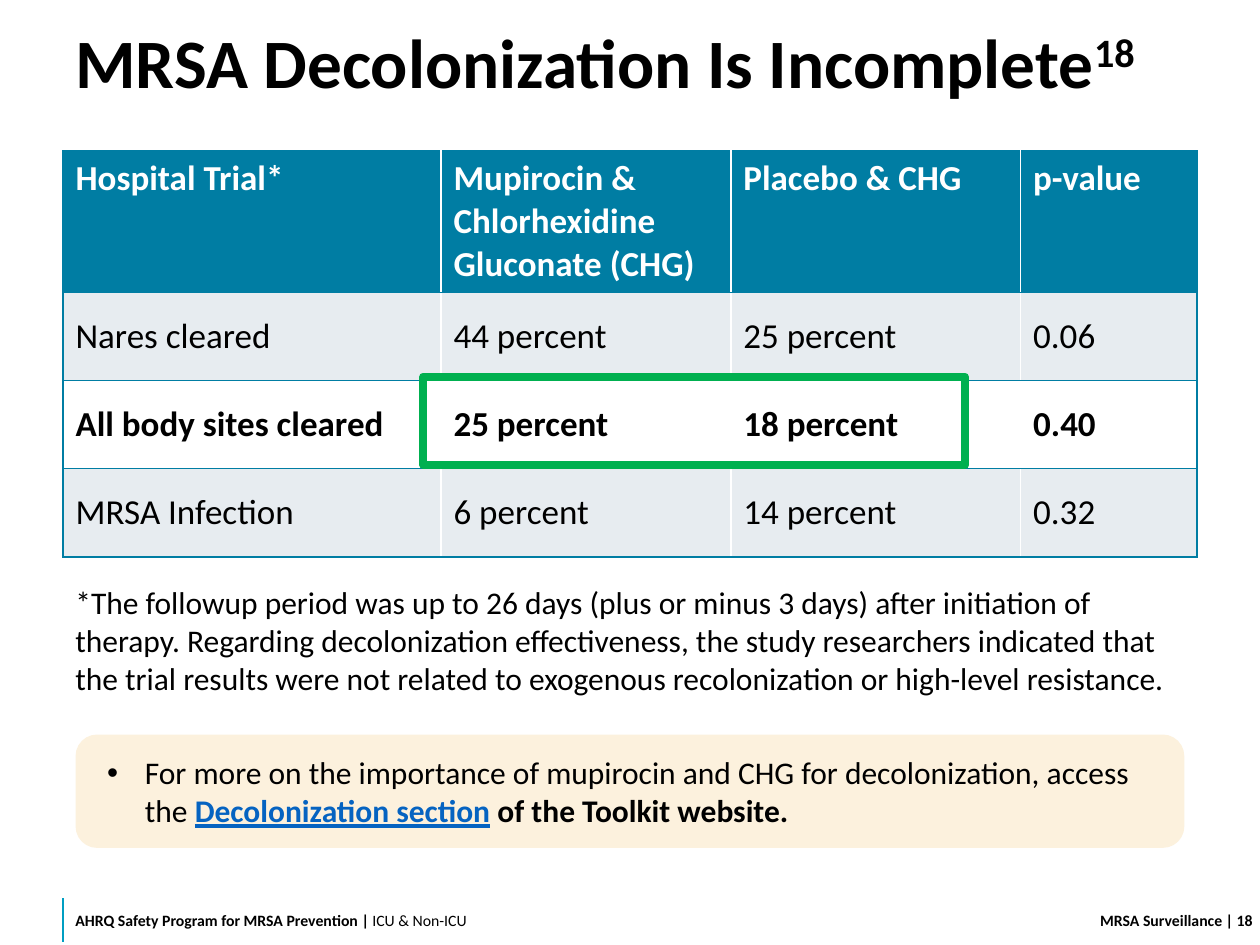
from lxml import etree
from pptx import Presentation
from pptx import util as u
from pptx.dml.color import RGBColor
from pptx.enum import shapes, text
from pptx.oxml import ns

# Content: text runs are (words, format) pairs
TITLE = [("MRSA Decolonization Is Incomplete", {}), ("18", {"raised": True})]
TRIAL = [
    ("Hospital Trial*", "Mupirocin & Chlorhexidine Gluconate (CHG)", "Placebo & CHG", "p-value"),
    ("Nares cleared", "44 percent", "25 percent", "0.06"),
    ("All body sites cleared", "25 percent", "18 percent", "0.40"),
    ("MRSA Infection", "6 percent", "14 percent", "0.32"),
]
KEY_ROW = 2
FOOTNOTE = [(
    "*The followup period was up to 26 days (plus or minus 3 days) after initiation of therapy. "
    "Regarding decolonization effectiveness, the study researchers indicated that the trial "
    "results were not related to exogenous recolonization or high-level resistance.", {})]
MORE = [
    ("For more on the importance of mupirocin and CHG for decolonization, access the ", {}),
    ("Decolonization section", {"bold": True, "underline": True, "color": "link"}),
    (" of the Toolkit website.", {"bold": True}),
]
PROGRAM = [("AHRQ Safety Program for MRSA Prevention | ", {"bold": True}), ("ICU & Non-ICU", {})]
TOPIC = [("MRSA Surveillance", {"bold": True})]
PAGE = [(" | 18", {"bold": True})]

THEME = {
    "font": "Calibri",
    "color": {"ink": "000000", "paper": "FFFFFF", "teal": "007DA3", "band": "E7ECF0",
              "cream": "FCF1DD", "link": "0563C1", "green": "00B050", "rule": "009EC2"},
    "size": {"title": 39.6, "table": 20, "body": 18, "footer": 9},
}

# Grid, in inches
WIDTH, HEIGHT = 10, 7.5
MARGIN = 0.5
CONTENT = WIDTH - 2 * MARGIN
TABLE_TOP = 1.2
COLUMNS = (3, 2.3, 2.3, 1.4)
ROWS = (1.12, 0.7, 0.7, 0.7)
FOOTER_TOP, FOOTER_HEIGHT = 7.1, 0.4


def color(name):
    return RGBColor.from_string(THEME["color"][name])


def inches(*lengths):
    return [u.Inches(length) for length in lengths]


def apply(target, values):
    for name, value in values.items():
        setattr(target, name, value)


def write(paragraph, runs, size, **shared):
    for words, own in runs:
        style = {"color": "ink", "bold": False, **shared, **own}
        run = paragraph.add_run()
        run.text = words
        run.font.color.rgb = color(style.pop("color"))
        if style.pop("raised", False):
            run._r.get_or_add_rPr().set("baseline", "30000")
        apply(run.font, {"name": THEME["font"], "size": u.Pt(THEME["size"][size]), **style})


def set_frame(frame, anchor, insets):
    sides = ("margin_left", "margin_top", "margin_right", "margin_bottom")
    apply(frame, {"word_wrap": True, "vertical_anchor": anchor,
                  **dict(zip(sides, inches(*insets)))})
    return frame.paragraphs[0]


def add_text(slide, box, runs, size, anchor=text.MSO_ANCHOR.MIDDLE,
             insets=(0.1, 0.05, 0.1, 0.05), layout=None, **shared):
    frame = slide.shapes.add_textbox(*inches(*box)).text_frame
    paragraph = set_frame(frame, anchor, insets)
    apply(paragraph, layout or {})
    write(paragraph, runs, size, **shared)


def add_border(cell, side):
    line = etree.SubElement(cell._tc.get_or_add_tcPr(), ns.qn(f"a:ln{side}"), w=str(u.Pt(1)))
    fill = etree.SubElement(line, ns.qn("a:solidFill"))
    etree.SubElement(fill, ns.qn("a:srgbClr"), val=THEME["color"]["teal"])


def add_trial_table(slide):
    frame = slide.shapes.add_table(len(ROWS), len(COLUMNS),
                                   *inches(MARGIN, TABLE_TOP, CONTENT, sum(ROWS)))
    table = frame.table
    for column, width in zip(table.columns, COLUMNS):
        column.width = u.Inches(width)
    for row, height in zip(table.rows, ROWS):
        row.height = u.Inches(height)
    for r, record in enumerate(TRIAL):
        header = r == 0
        for c, words in enumerate(record):
            cell = table.cell(r, c)
            cell.vertical_anchor = text.MSO_ANCHOR.TOP if header else text.MSO_ANCHOR.MIDDLE
            outer = {0: "L", len(COLUMNS) - 1: "R"}.get(c, "")
            for side in outer + "TB":
                add_border(cell, side)
            cell.fill.solid()
            cell.fill.fore_color.rgb = color("teal" if header else "band" if r % 2 else "paper")
            write(cell.text_frame.paragraphs[0], [(words, {})], "table",
                  bold=r in (0, KEY_ROW), color="paper" if header else "ink")


def add_more_box(slide):
    box = slide.shapes.add_shape(shapes.MSO_SHAPE.ROUNDED_RECTANGLE,
                                 *inches(MARGIN + 0.1, 5.83, CONTENT - 0.2, 0.9))
    box.adjustments[0] = 0.19
    box.shadow.inherit = False
    box.fill.solid()
    box.fill.fore_color.rgb = color("cream")
    box.line.fill.background()
    paragraph = set_frame(box.text_frame, text.MSO_ANCHOR.MIDDLE, (0.2, 0.1, 0.2, 0.1))
    paragraph.alignment = text.PP_ALIGN.LEFT
    properties = paragraph._p.get_or_add_pPr()
    indent = u.Inches(0.3)
    properties.set("marL", str(indent))
    properties.set("indent", str(-indent))
    etree.SubElement(properties, ns.qn("a:buFont"), typeface="Arial")
    etree.SubElement(properties, ns.qn("a:buChar"), char="•")
    write(paragraph, MORE, "body")


def add_highlight(slide):
    top = TABLE_TOP + sum(ROWS[:KEY_ROW]) - 0.03
    frame = slide.shapes.add_shape(shapes.MSO_SHAPE.RECTANGLE,
                                   *inches(3.36, top, 4.3, ROWS[KEY_ROW]))
    frame.shadow.inherit = False
    frame.fill.background()
    frame.line.color.rgb = color("green")
    frame.line.width = u.Pt(4.5)
    etree.SubElement(frame.line._get_or_add_ln(), ns.qn("a:round"))


def add_footer(slide):
    rule = slide.shapes.add_connector(shapes.MSO_CONNECTOR.STRAIGHT,
                                      *inches(MARGIN, 7.13, MARGIN, 7.48))
    rule.line.color.rgb = color("rule")
    rule.line.width = u.Pt(1)
    etree.SubElement(rule._element.spPr, ns.qn("a:effectLst"))
    right = {"alignment": text.PP_ALIGN.RIGHT}
    for left, width, runs, insets, layout in (
        (MARGIN, 4.1, PROGRAM, (0.1, 0, 0.1, 0), None),
        (7.1, 2.6, TOPIC, (0.1, 0.05, 0, 0.05), right),
        (9.7, 0.3, PAGE, (0, 0.05, 0, 0.05), None),
    ):
        add_text(slide, (left, FOOTER_TOP, width, FOOTER_HEIGHT), runs, "footer",
                 insets=insets, layout=layout)


def main():
    deck = Presentation()
    apply(deck, {"slide_width": u.Inches(WIDTH), "slide_height": u.Inches(HEIGHT)})
    slide = deck.slides.add_slide(deck.slide_layouts[6])
    add_footer(slide)
    add_text(slide, (MARGIN, 0, CONTENT, 1), TITLE, "title", insets=(0.1, 0.1, 0.1, 0.05),
             layout={"line_spacing": 0.9}, bold=True)
    add_trial_table(slide)
    add_text(slide, (MARGIN, 4.58, CONTENT, 1.2), FOOTNOTE, "body", anchor=text.MSO_ANCHOR.TOP)
    add_more_box(slide)
    add_highlight(slide)
    deck.save("out.pptx")


if __name__ == "__main__":
    main()
